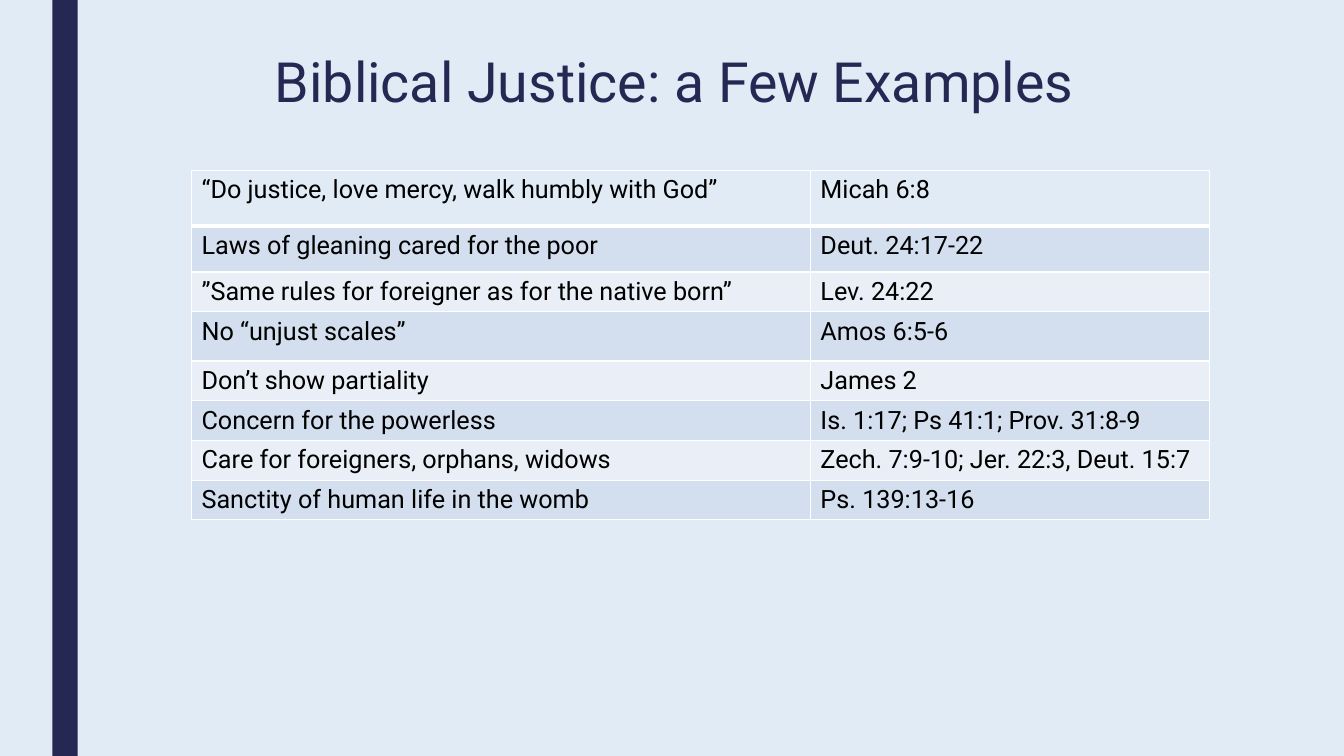
from dataclasses import dataclass

import pptx
import pptx.dml.color
import pptx.enum.shapes
import pptx.enum.text
import pptx.oxml
import pptx.oxml.ns
import pptx.presentation
import pptx.slide
import pptx.table
import pptx.util

RGBColor = pptx.dml.color.RGBColor
NAVY = RGBColor(0x24, 0x28, 0x52)
PALE_BLUE = RGBColor(0xE0, 0xEB, 0xF6)
BAND_DARK = RGBColor(0xD3, 0xDF, 0xEE)
BAND_LIGHT = RGBColor(0xEA, 0xEF, 0xF7)
WHITE = RGBColor(0xFF, 0xFF, 0xFF)
BLACK = RGBColor(0x00, 0x00, 0x00)

FONT = "Roboto"
SLIDE_WIDTH = pptx.util.Inches(13.33)
SLIDE_HEIGHT = pptx.util.Inches(7.5)
THIN, THICK = 1, 3


@dataclass(frozen=True)
class Area:
    """Left and width in hundredths of slide width, top and height of slide height."""

    left: float
    top: float
    width: float
    height: float

    def box(self) -> tuple[int, int, int, int]:
        return across(self.left), down(self.top), across(self.width), down(self.height)


@dataclass(frozen=True)
class Example:
    teaching: str
    passage: str
    height: float = 5.25


BAR = Area(3.9, 0, 1.88, 100)
TITLE = Area(10.8, 6.13, 78.75, 11.07)
COLUMN_WIDTHS = (46.05, 29.7)
EXAMPLES = (
    Example("“Do justice, love mercy, walk humbly with God”", "Micah 6:8", 7.33),
    Example("Laws of gleaning cared for the poor", "Deut. 24:17-22", 6.13),
    Example("”Same rules for foreigner as for the native born”", "Lev. 24:22"),
    Example("No “unjust scales”", "Amos 6:5-6", 6.53),
    Example("Don’t show partiality", "James 2"),
    Example("Concern for the powerless", "Is. 1:17; Ps 41:1; Prov. 31:8-9"),
    Example("Care for foreigners, orphans, widows", "Zech. 7:9-10; Jer. 22:3, Deut. 15:7"),
    Example("Sanctity of human life in the womb", "Ps. 139:13-16"),
)
TABLE = Area(14.25, 22.53, sum(COLUMN_WIDTHS), sum(example.height for example in EXAMPLES))


def across(share: float) -> int:
    return round(SLIDE_WIDTH * share / 100)


def down(share: float) -> int:
    return round(SLIDE_HEIGHT * share / 100)


def draw_bar(slide: pptx.slide.Slide) -> None:
    bar = slide.shapes.add_shape(pptx.enum.shapes.MSO_SHAPE.RECTANGLE, *BAR.box())
    bar.shadow.inherit = False
    bar.fill.solid()
    bar.fill.fore_color.rgb = NAVY
    bar.line.fill.background()


def draw_title(slide: pptx.slide.Slide, text: str) -> None:
    title = slide.shapes.title
    title.left, title.top, title.width, title.height = TITLE.box()
    frame = title.text_frame
    frame.text = text
    frame.word_wrap = True
    frame.auto_size = pptx.enum.text.MSO_AUTO_SIZE.NONE
    frame.vertical_anchor = pptx.enum.text.MSO_ANCHOR.TOP
    frame.margin_top = pptx.util.Inches(0.09)
    paragraph = frame.paragraphs[0]
    paragraph.alignment = pptx.enum.text.PP_ALIGN.CENTER
    paragraph.line_spacing = 0.89
    paragraph.font.name = FONT
    paragraph.font.size = pptx.util.Pt(39.6)
    paragraph.font.color.rgb = NAVY


def add_borders(cell: pptx.table._Cell, top: int, bottom: int) -> None:
    properties = cell._tc.get_or_add_tcPr()
    for side, points in (("L", THIN), ("R", THIN), ("T", top), ("B", bottom)):
        properties.append(pptx.oxml.parse_xml(
            f'<a:ln{side} {pptx.oxml.ns.nsdecls("a")} w="{pptx.util.Pt(points)}">'
            f'<a:solidFill><a:srgbClr val="{WHITE}"/></a:solidFill></a:ln{side}>'
        ))


def draw_cell(cell: pptx.table._Cell, text: str, row: int) -> None:
    add_borders(cell, THICK if row == 1 else THIN, THICK if row == 0 else THIN)
    if row == 0:
        cell.fill.background()
    else:
        cell.fill.solid()
        cell.fill.fore_color.rgb = BAND_DARK if row % 2 else BAND_LIGHT
    cell.text = text
    font = cell.text_frame.paragraphs[0].font
    font.name = FONT
    font.size = pptx.util.Pt(18)
    font.bold = False
    font.color.rgb = BLACK


def draw_table(slide: pptx.slide.Slide) -> None:
    table = slide.shapes.add_table(len(EXAMPLES), len(COLUMN_WIDTHS), *TABLE.box()).table
    table.first_row = False
    table.horz_banding = False
    for column, width in zip(table.columns, COLUMN_WIDTHS):
        column.width = across(width)
    for row, example in enumerate(EXAMPLES):
        table.rows[row].height = down(example.height)
        for column, text in enumerate((example.teaching, example.passage)):
            draw_cell(table.cell(row, column), text, row)


def main() -> None:
    presentation = pptx.Presentation()
    presentation.slide_width = SLIDE_WIDTH
    presentation.slide_height = SLIDE_HEIGHT
    slide = presentation.slides.add_slide(presentation.slide_layouts.get_by_name("Title Only"))
    slide.background.fill.solid()
    slide.background.fill.fore_color.rgb = PALE_BLUE
    draw_bar(slide)
    draw_title(slide, "Biblical Justice: a Few Examples")
    draw_table(slide)
    presentation.save("out.pptx")


if __name__ == "__main__":
    main()
